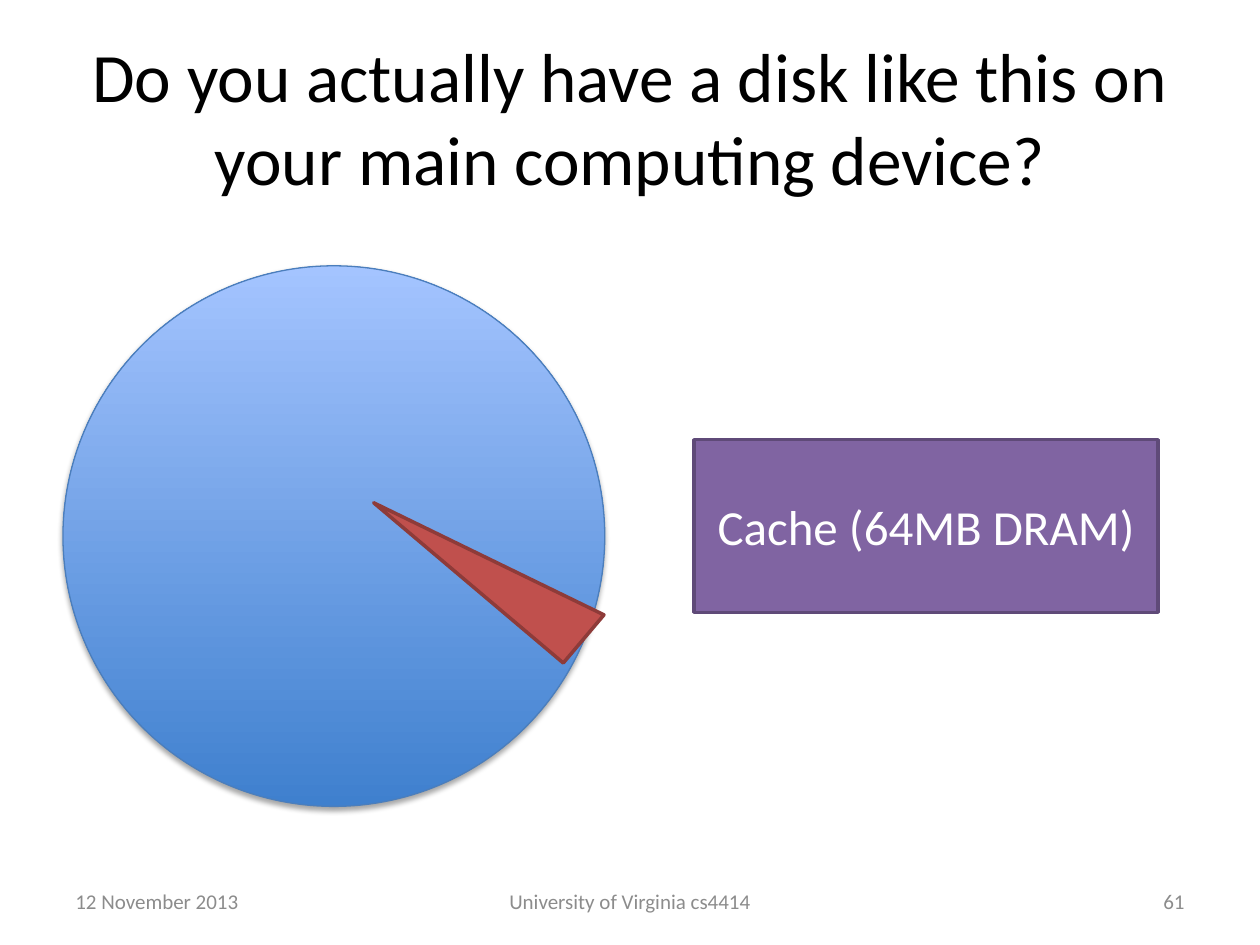
from lxml import etree
from pptx import Presentation
from pptx.dml.color import RGBColor
from pptx.enum import shapes, text
from pptx.oxml import ns
from pptx.util import Inches, Pt

ALIGN = text.PP_ALIGN
SHAPE = shapes.MSO_SHAPE


def color(value):
    return RGBColor.from_string(value)


def write(shape, wording, size, ink, align):
    frame = shape.text_frame
    frame.word_wrap = True
    frame.vertical_anchor = text.MSO_ANCHOR.MIDDLE
    para = frame.paragraphs[0]
    para.text = wording
    para.alignment = align
    para.font.name = "Calibri"
    para.font.size = Pt(size)
    para.font.color.rgb = color(ink)


def add_label(page, box, wording, size, ink, align):
    label = page.shapes.add_textbox(*map(Inches, box))
    write(label, wording, size, ink, align)


def add_figure(page, kind, box, fill, line, width):
    figure = page.shapes.add_shape(kind, *map(Inches, box))
    figure.shadow.inherit = False
    if fill:
        figure.fill.solid()
        figure.fill.fore_color.rgb = color(fill)
    figure.line.color.rgb = color(line)
    figure.line.width = Pt(width)
    return figure


def add_soft_shadow(shape):
    effects = shape._element.spPr.find(ns.qn("a:effectLst"))
    shadow = etree.SubElement(effects, ns.qn("a:outerShdw"), blurRad=str(Pt(3.1)),
                              dist=str(Pt(1.8)), dir="5400000", rotWithShape="0")
    tint = etree.SubElement(shadow, ns.qn("a:srgbClr"), val="000000")
    etree.SubElement(tint, ns.qn("a:alpha"), val="35000")


def add_disk(page, box):
    left, top, width, height = box
    # Platter, dark at the bottom and light at the top
    platter = add_figure(page, SHAPE.OVAL, box, None, "4B7EBC", 0.75)
    platter.fill.gradient()
    platter.fill.gradient_angle = 90
    for stop, shade in zip(platter.fill.gradient_stops, ("3F80CE", "A4C4FF")):
        stop.color.rgb = color(shade)
    add_soft_shadow(platter)
    # Read arm
    arm_box = (left + 3.13, top + 1.34, 0.5, 1.97)
    arm = add_figure(page, SHAPE.RIGHT_TRIANGLE, arm_box, "C0504D", "8E3B39", 2)
    arm.rotation = 310.2


def add_cache(page, box):
    cache = add_figure(page, SHAPE.RECTANGLE, box, "8064A2", "5F4A78", 2)
    write(cache, "Cache (64MB DRAM)", 28, "FFFFFF", ALIGN.CENTER)


def add_footer(page, box):
    left, top, width, height = box
    side, middle = 2.33, 3.17
    parts = (
        (left, side, "12 November 2013", ALIGN.LEFT),
        (left + (width - middle) / 2, middle, "University of Virginia cs4414", ALIGN.CENTER),
        (left + width - side, side, "61", ALIGN.RIGHT),
    )
    for start, span, wording, align in parts:
        add_label(page, (start, top, span, height), wording, 12, "8C8C8C", align)


def main():
    deck = Presentation()
    deck.slide_width, deck.slide_height = Inches(10), Inches(7.5)
    page = deck.slides.add_slide(deck.slide_layouts[6])
    add_label(page, (0.5, 0.3, 9, 1.25),
              "Do you actually have a disk like this on your main computing device?",
              39.6, "000000", ALIGN.CENTER)
    add_footer(page, (0.5, 6.95, 9, 0.4))
    add_disk(page, (0.5, 2.11, 4.3, 4.29))
    add_cache(page, (5.51, 3.49, 3.68, 1.37))
    deck.save("out.pptx")


if __name__ == "__main__":
    main()
